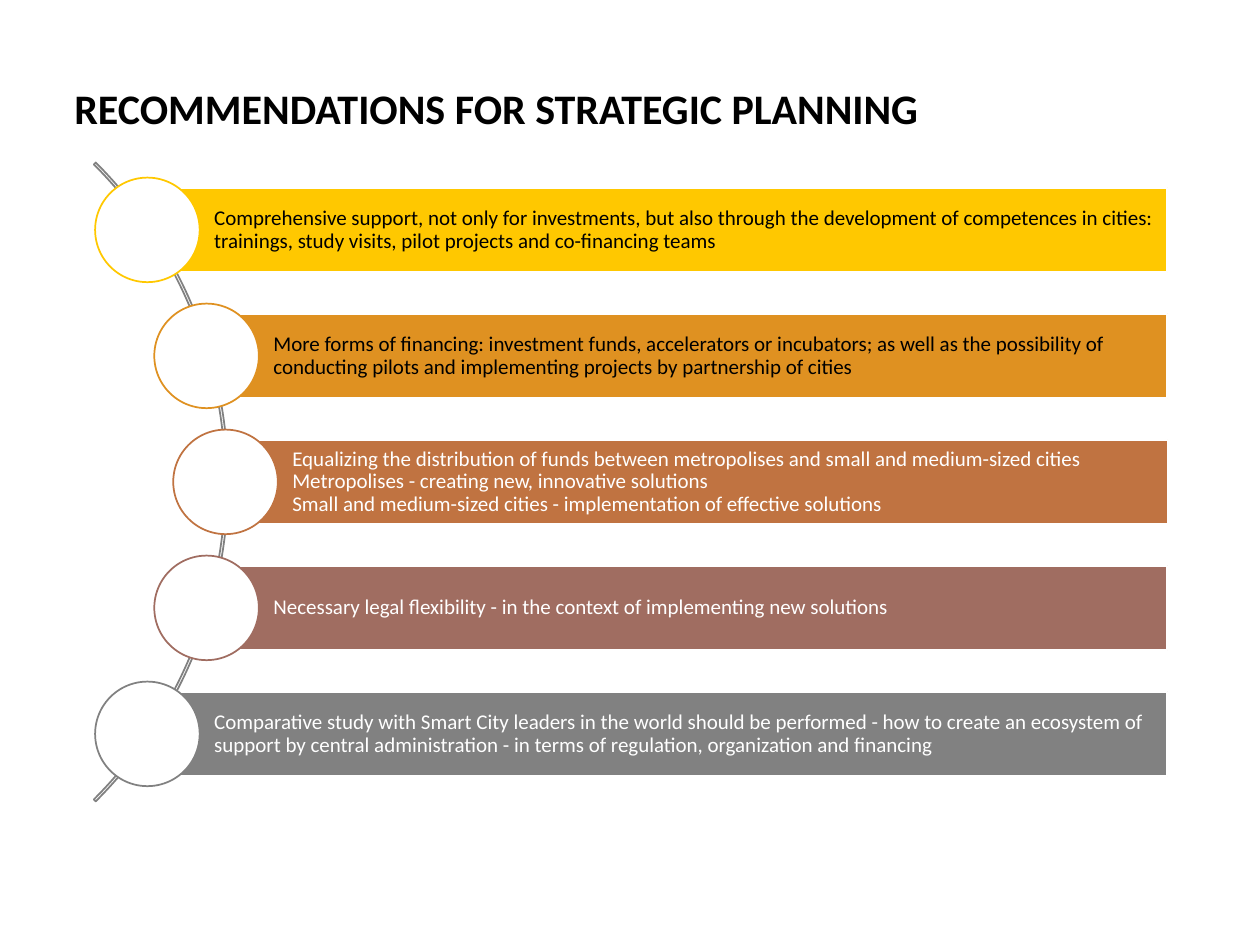
"""Build the slide of strategic planning recommendations along an arc."""
from pptx import Presentation
from pptx.dml.color import RGBColor
from pptx.enum.shapes import MSO_SHAPE as SHAPE
from pptx.enum.text import MSO_ANCHOR as ANCHOR, PP_ALIGN as ALIGN
from pptx.util import Inches, Pt

BLACK = RGBColor(0x00, 0x00, 0x00)
WHITE = RGBColor(0xFF, 0xFF, 0xFF)
YELLOW = RGBColor(0xFF, 0xC8, 0x00)
ORANGE = RGBColor(0xDF, 0x91, 0x21)
COPPER = RGBColor(0xC0, 0x73, 0x41)
MAUVE = RGBColor(0xA0, 0x6D, 0x61)
GRAY = RGBColor(0x81, 0x81, 0x81)

TITLE = "RECOMMENDATIONS FOR STRATEGIC PLANNING"
RECOMMENDATIONS = [
    (1.17, YELLOW, BLACK,
     "Comprehensive support, not only for investments, but also through the "
     "development of competences in cities: trainings, study visits, pilot "
     "projects and co-financing teams"),
    (1.64, ORANGE, BLACK,
     "More forms of financing: investment funds, accelerators or incubators; "
     "as well as the possibility of conducting pilots and implementing "
     "projects by partnership of cities"),
    (1.79, COPPER, WHITE,
     "Equalizing the distribution of funds between metropolises and small and "
     "medium-sized cities\n"
     "Metropolises - creating new, innovative solutions\n"
     "Small and medium-sized cities - implementation of effective solutions"),
    (1.64, MAUVE, WHITE,
     "Necessary legal flexibility - in the context of implementing new "
     "solutions"),
    (1.17, GRAY, WHITE,
     "Comparative study with Smart City leaders in the world should be "
     "performed - how to create an ecosystem of support by central "
     "administration - in terms of regulation, organization and financing"),
]

FIRST_MIDDLE, PITCH = 1.825, 1.0
BAR_RIGHT, BAR_HEIGHT, CIRCLE = 9.265, 0.67, 0.83
BAR_FRAME = {"word_wrap": True, "vertical_anchor": ANCHOR.MIDDLE,
             "margin_left": Inches(0.53), "margin_right": Inches(0.03),
             "margin_top": Inches(0.03), "margin_bottom": Inches(0.03)}
TITLE_FRAME = {"word_wrap": True, "vertical_anchor": ANCHOR.TOP}


def add_shape(slide, kind, box, fill, line):
    sp = slide.shapes.add_shape(kind, *map(Inches, box))
    sp.shadow.inherit = False
    if fill is None:
        sp.fill.background()
    else:
        sp.fill.solid()
        sp.fill.fore_color.rgb = fill
    sp.line.color.rgb = line
    sp.line.width = Pt(1)
    return sp


def write(sp, text, frame, spacing, size, color, bold=False):
    tf = sp.text_frame
    for name, value in frame.items():
        setattr(tf, name, value)
    p = tf.paragraphs[0]
    p.text = text
    p.alignment = ALIGN.LEFT
    p.line_spacing = spacing
    p.space_before = Pt(0)
    for r in p.runs:
        for name, value in {"name": "Calibri", "size": Pt(size), "bold": bold}.items():
            setattr(r.font, name, value)
        r.font.color.rgb = color


def main():
    prs = Presentation()
    prs.slide_width, prs.slide_height = Inches(10), Inches(7.5)
    slide = prs.slides.add_slide(prs.slide_layouts[5])

    title = slide.shapes.title
    title.left, title.top = Inches(0.49), Inches(0.55)
    title.width, title.height = Inches(9.24), Inches(0.51)
    write(title, TITLE, TITLE_FRAME, 1.13, 24, BLACK, bold=True)

    arc = add_shape(slide, SHAPE.BLOCK_ARC, (-5.36, 0.24, 7.17, 7.17), None, GRAY)
    for i, value in enumerate((189, 27, 0.003)):
        arc.adjustments[i] = value

    for i, (left, color, text_color, text) in enumerate(RECOMMENDATIONS):
        middle = FIRST_MIDDLE + i * PITCH
        bar = add_shape(slide, SHAPE.RECTANGLE,
                        (left, middle - BAR_HEIGHT / 2, BAR_RIGHT - left, BAR_HEIGHT),
                        color, WHITE)
        write(bar, text, BAR_FRAME, 0.9, 12, text_color)
        add_shape(slide, SHAPE.OVAL,
                  (left - CIRCLE / 2, middle - CIRCLE / 2, CIRCLE, CIRCLE), WHITE, color)

    prs.save("out.pptx")


if __name__ == "__main__":
    main()
